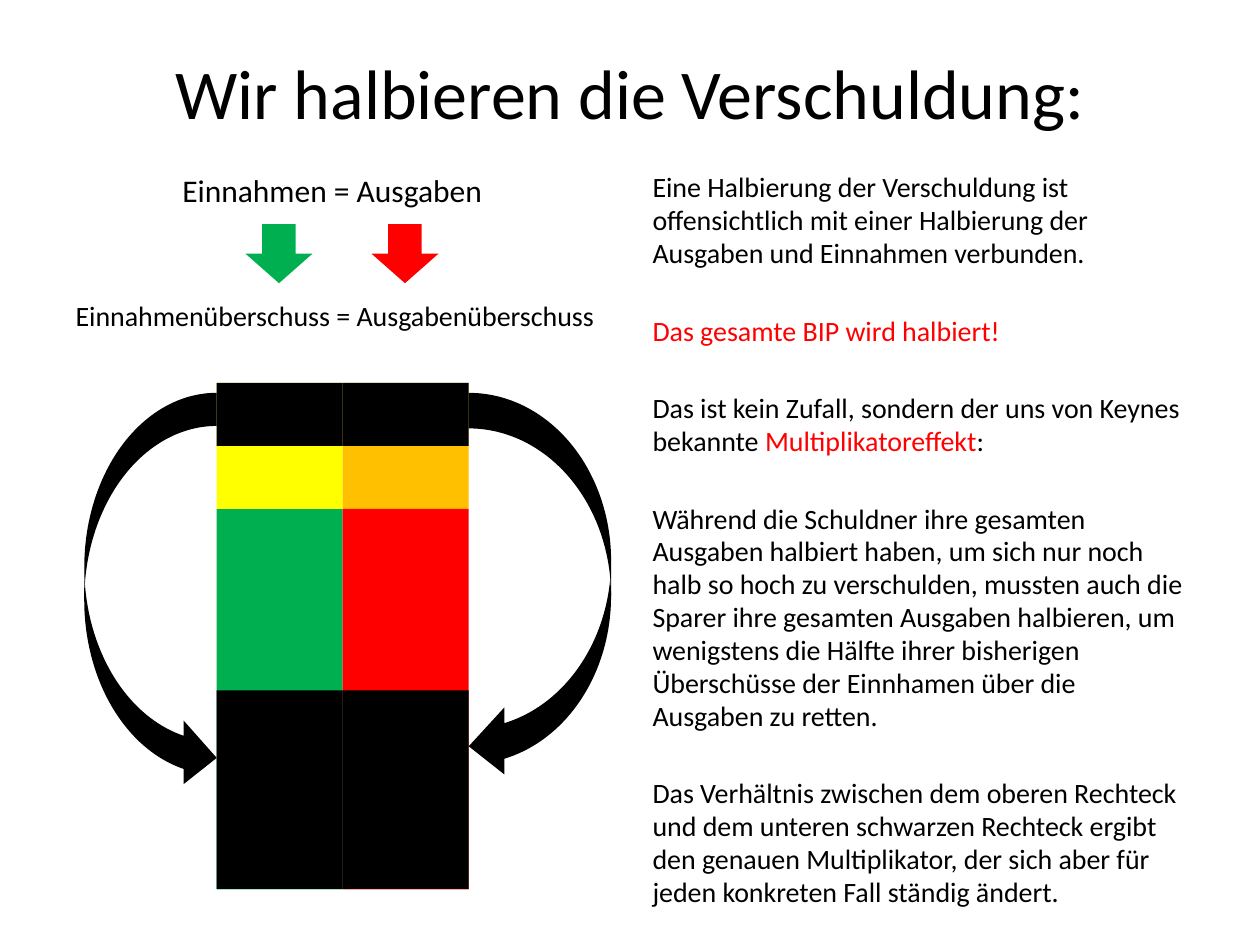
from pptx import Presentation
from pptx.dml.color import RGBColor
from pptx.enum.shapes import MSO_SHAPE
from pptx.enum.text import MSO_ANCHOR, MSO_AUTO_SIZE, PP_ALIGN
from pptx.util import Cm, Pt
from lxml import etree

RECT, DOWN = MSO_SHAPE.RECTANGLE, MSO_SHAPE.DOWN_ARROW
CURVED_RIGHT, CURVED_LEFT = MSO_SHAPE.CURVED_RIGHT_ARROW, MSO_SHAPE.CURVED_LEFT_ARROW
MIDDLE, CENTER, LEFT = MSO_ANCHOR.MIDDLE, PP_ALIGN.CENTER, PP_ALIGN.LEFT
NO_FIT = MSO_AUTO_SIZE.NONE
A = "{http://schemas.openxmlformats.org/drawingml/2006/main}"
BLACK, RED, GREEN = "000000", "FF0000", "00B050"
YELLOW, ORANGE = "FFFF00", "FFC000"


def color(value):
    return RGBColor.from_string(value)


def write(p, parts, size, indent=0, before=0, align=LEFT):
    """Fill a paragraph with (text, colour) runs and no bullet."""
    p.alignment, p.space_before = align, Pt(before)
    pPr = p._p.get_or_add_pPr()
    pPr.set("marL", str(Cm(indent)))
    pPr.set("indent", "0")
    etree.SubElement(pPr, A + "buNone")
    for text, value in parts:
        r = p.add_run()
        r.text = text
        r.font.name, r.font.size = "Calibri", Pt(size)
        r.font.color.rgb = color(value)


prs = Presentation()
prs.slide_width, prs.slide_height = Cm(25.4), Cm(19.05)
s = prs.slides.add_slide(prs.slide_layouts[3])
title, left, right = s.placeholders

# Placeholder positions
boxes = [(title, 1.27, 0.76, 22.86, 2.16),
         (left, 1.27, 3.33, 11.23, 15.19),
         (right, 12.9, 3.33, 11.23, 14.6)]
for sp, x, y, w, h in boxes:
    sp.left, sp.top, sp.width, sp.height = Cm(x), Cm(y), Cm(w), Cm(h)
    sp.text_frame.auto_size = NO_FIT

# Title
title.text_frame.vertical_anchor = MIDDLE
write(title.text_frame.paragraphs[0],
      [("Wir halbieren die Verschuldung:", BLACK)], 40, align=CENTER)

# Left: the two equations
tf = left.text_frame
write(tf.paragraphs[0], [("Einnahmen = Ausgaben", BLACK)], 18, indent=2.15)
write(tf.add_paragraph(),
      [("Einnahmenüberschuss = Ausgabenüberschuss", BLACK)], 16, before=51)

# Right: explanation
explanation = [
    [("Eine Halbierung der Verschuldung ist offensichtlich mit einer Halbierung "
      "der Ausgaben und Einnahmen verbunden.", BLACK)],
    [("Das gesamte BIP wird halbiert!", RED)],
    [("Das ist kein Zufall, sondern der uns von Keynes bekannte ", BLACK),
     ("Multiplikatoreffekt", RED), (":", BLACK)],
    [("Während die Schuldner ihre gesamten Ausgaben halbiert haben, um sich nur "
      "noch halb so hoch zu verschulden, mussten auch die Sparer ihre gesamten "
      "Ausgaben halbieren, um wenigstens die Hälfte ihrer bisherigen Überschüsse "
      "der Einnhamen über die Ausgaben zu retten.", BLACK)],
    [("Das Verhältnis zwischen dem oberen Rechteck und dem unteren schwarzen "
      "Rechteck ergibt den genauen Multiplikator, der sich aber für jeden "
      "konkreten Fall ständig ändert.", BLACK)],
]
tf = right.text_frame
for i, parts in enumerate(explanation):
    p = tf.add_paragraph() if i else tf.paragraphs[0]
    write(p, parts, 16, before=25.5 if i else 0)
    p.line_spacing = 0.98

# Diagram: two columns of stacked blocks, then the arrows
col, x1 = 2.54, 4.37
x2, x3 = x1 + col, x1 + 2 * col
shapes = [
    (RECT, x1, 10.26, col, 7.67, GREEN),
    (RECT, x1, 7.72, col, col, YELLOW),
    (RECT, x2, 7.72, col, col, ORANGE),
    (RECT, x2, 10.26, col, 7.67, RED),
    (CURVED_RIGHT, 1.7, 7.92, 2.67, 8.0, BLACK),
    (CURVED_LEFT, x3, 7.92, 2.87, 7.8, BLACK),
    (DOWN, 4.95, 4.52, 1.35, 1.19, GREEN),
    (DOWN, 4.95 + col, 4.52, 1.35, 1.19, RED),
]
for x in (x1, x2):
    shapes += [(RECT, x, 7.72, col, 1.27, BLACK),
               (RECT, x, 13.92, col, 4.0, BLACK)]
bend = {CURVED_RIGHT: 0.48, CURVED_LEFT: 0.47}
for kind, x, y, w, h, value in shapes:
    sp = s.shapes.add_shape(kind, Cm(x), Cm(y), Cm(w), Cm(h))
    sp.shadow.inherit = False
    sp.fill.solid()
    sp.fill.fore_color.rgb = color(value)
    sp.line.fill.background()
    if kind in bend:
        sp.adjustments[1] = bend[kind]

prs.save("out.pptx")
